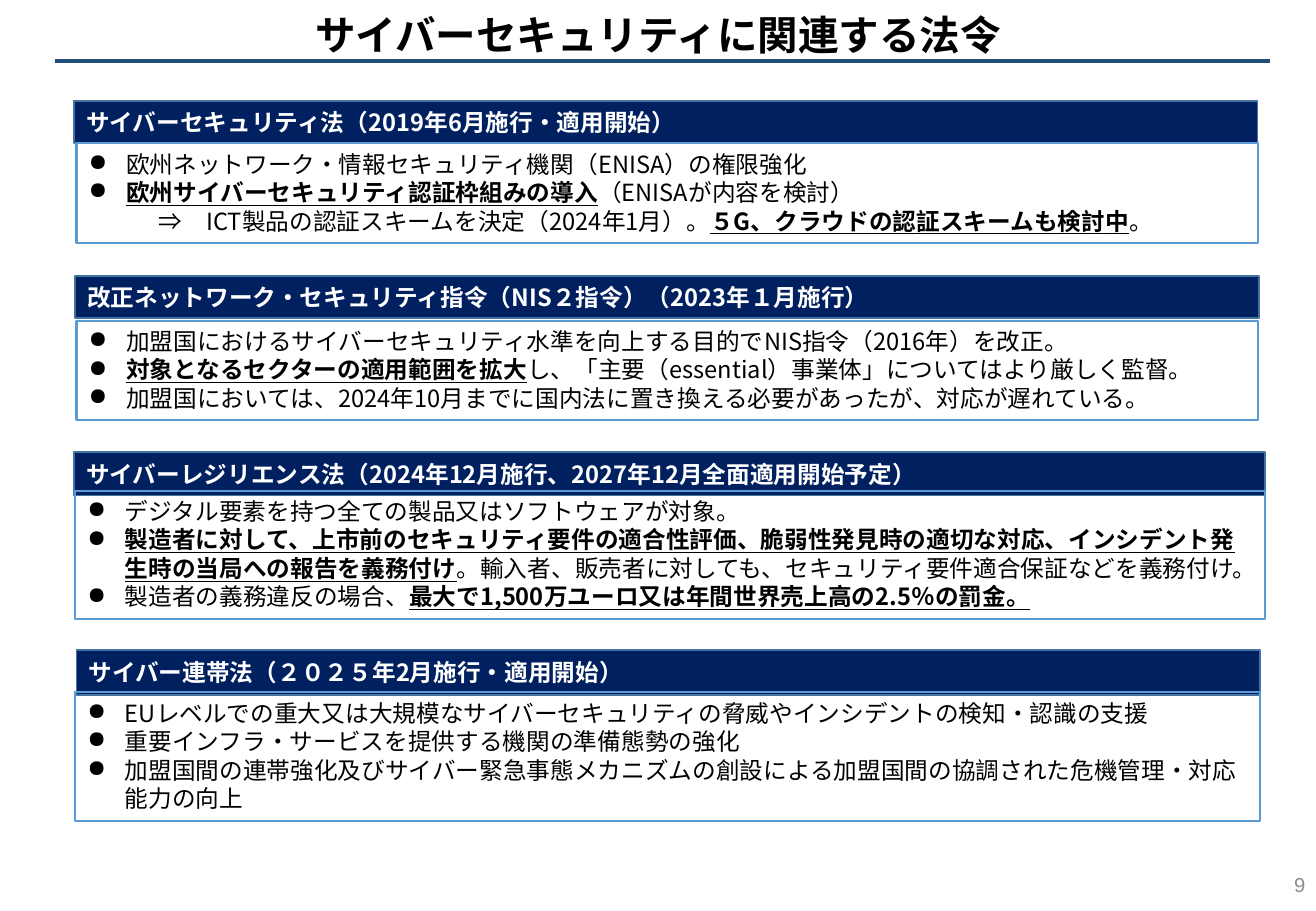
"""Build a slide summarising four laws on cyber security."""
from lxml import etree
from pptx import Presentation
from pptx.dml.color import RGBColor
from pptx.enum.shapes import MSO_CONNECTOR, MSO_SHAPE
from pptx.enum.text import MSO_ANCHOR, PP_ALIGN
from pptx.oxml.ns import qn
from pptx.util import Inches, Pt

RECTANGLE, STRAIGHT = MSO_SHAPE.RECTANGLE, MSO_CONNECTOR.STRAIGHT
TOP, MIDDLE = MSO_ANCHOR.TOP, MSO_ANCHOR.MIDDLE
LEFT, CENTER, RIGHT = PP_ALIGN.LEFT, PP_ALIGN.CENTER, PP_ALIGN.RIGHT

THEME = {
    "font": "Noto Sans CJK JP", "number_font": "Arial",
    "title_size": 24, "law_size": 14, "number_size": 12,
    "title_pitch": 31, "body_pitch": 16.9,
    "text": "000000", "header_text": "FFFFFF", "number": "8C8C8C",
    "rule": "1F4E79", "header_fill": "002060",
    "header_line": "43739E", "body_line": "5B9BD5",
}
BULLET_INDENT, ARROW_INDENT = 0.31, 0.58

TITLE = "サイバーセキュリティに関連する法令"
PAGE_NUMBER = "9"

# Each point is (kind, [(words, emphasised), ...]).
LAWS = [
    {"header": "サイバーセキュリティ法（2019年6月施行・適用開始）",
     "header_box": (0.61, 0.83, 9.74, 0.35), "body_box": (0.63, 1.18, 9.72, 0.82),
     "points": [
         ("bullet", [("欧州ネットワーク・情報セキュリティ機関（ENISA）の権限強化", False)]),
         ("bullet", [("欧州サイバーセキュリティ認証枠組みの導入", True),
                     ("（ENISAが内容を検討）", False)]),
         ("arrow", [("⇒　ICT製品の認証スキームを決定（2024年1月）。", False),
                    ("５G、クラウドの認証スキームも検討中", True), ("。", False)])]},
    {"header": "改正ネットワーク・セキュリティ指令（NIS２指令）（2023年１月施行）",
     "header_box": (0.62, 2.27, 9.74, 0.35), "body_box": (0.63, 2.64, 9.72, 0.82),
     "points": [
         ("bullet", [("加盟国におけるサイバーセキュリティ水準を向上する目的で"
                      "NIS指令（2016年）を改正。", False)]),
         ("bullet", [("対象となるセクターの適用範囲を拡大", True),
                     ("し、「主要（essential）事業体」についてはより厳しく監督。", False)]),
         ("bullet", [("加盟国においては、2024年10月までに国内法に置き換える必要が"
                      "あったが、対応が遅れている。", False)])]},
    {"header": "サイバーレジリエンス法（2024年12月施行、2027年12月全面適用開始予定）",
     "header_box": (0.61, 3.72, 9.8, 0.36), "body_box": (0.62, 4.04, 9.79, 1.06),
     "points": [
         ("bullet", [("デジタル要素を持つ全ての製品又はソフトウェアが対象。", False)]),
         ("bullet", [("製造者に対して、上市前のセキュリティ要件の適合性評価、脆弱性発見時の"
                      "適切な対応、インシデント発生時の当局への報告を義務付け", True),
                     ("。輸入者、販売者に対しても、セキュリティ要件適合保証などを"
                      "義務付け。", False)]),
         ("bullet", [("製造者の義務違反の場合、", False),
                     ("最大で1,500万ユーロ又は年間世界売上高の2.5％の罰金。", True)])]},
    {"header": "サイバー連帯法（２０２５年2月施行・適用開始）",
     "header_box": (0.63, 5.35, 9.74, 0.37), "body_box": (0.62, 5.7, 9.75, 1.06),
     "points": [
         ("bullet", [("EUレベルでの重大又は大規模なサイバーセキュリティの脅威や"
                      "インシデントの検知・認識の支援", False)]),
         ("bullet", [("重要インフラ・サービスを提供する機関の準備態勢の強化", False)]),
         ("bullet", [("加盟国間の連帯強化及びサイバー緊急事態メカニズムの創設による"
                      "加盟国間の協調された危機管理・対応能力の向上", False)])]},
]


def color(key):
    return RGBColor.from_string(THEME[key])


def apply(target, values):
    for name, value in values.items():
        setattr(target, name, value)


def write_run(paragraph, words, size, ink, font="font", **style):
    run = paragraph.add_run()
    run.text = words
    apply(run.font, {"name": THEME[font], "size": Pt(THEME[size]), **style})
    run.font.color.rgb = color(ink)
    east_asian = etree.SubElement(run.font._element, qn("a:ea"))
    east_asian.set("typeface", THEME[font])


def prepare_frame(holder, anchor, align):
    frame = holder.text_frame
    apply(frame, {"word_wrap": True, "vertical_anchor": anchor})
    frame.paragraphs[0].alignment = align
    return frame


def add_label(slide, box, words, size, ink, anchor, align, pitch=None, **style):
    label = slide.shapes.add_textbox(*map(Inches, box))
    paragraph = prepare_frame(label, anchor, align).paragraphs[0]
    if pitch:
        paragraph.line_spacing = Pt(pitch)
    write_run(paragraph, words, size, ink, **style)


def add_panel(slide, box, outline, width, fill=None):
    panel = slide.shapes.add_shape(RECTANGLE, *map(Inches, box))
    panel.shadow.inherit = False
    if fill:
        panel.fill.solid()
        panel.fill.fore_color.rgb = color(fill)
    else:
        panel.fill.background()
    panel.line.color.rgb = color(outline)
    panel.line.width = Pt(width)
    return panel


def indent_point(paragraph, kind):
    properties = paragraph._p.get_or_add_pPr()
    if kind == "bullet":
        properties.set("marL", str(Inches(BULLET_INDENT)))
        properties.set("indent", str(-Inches(BULLET_INDENT)))
        etree.SubElement(properties, qn("a:buChar")).set("char", "●")
    else:
        properties.set("marL", str(Inches(ARROW_INDENT)))
        properties.set("indent", "0")


def add_law(slide, law):
    header = add_panel(slide, law["header_box"], "header_line", 1, "header_fill")
    heading = prepare_frame(header, MIDDLE, LEFT).paragraphs[0]
    write_run(heading, law["header"], "law_size", "header_text", bold=True)

    body = add_panel(slide, law["body_box"], "body_line", 1.25)
    frame = prepare_frame(body, TOP, LEFT)
    for index, (kind, pieces) in enumerate(law["points"]):
        paragraph = frame.add_paragraph() if index else frame.paragraphs[0]
        apply(paragraph, {"alignment": LEFT, "line_spacing": Pt(THEME["body_pitch"])})
        indent_point(paragraph, kind)
        for words, strong in pieces:
            write_run(paragraph, words, "law_size", "text", bold=strong, underline=strong)


def add_title_rule(slide):
    rule = slide.shapes.add_connector(STRAIGHT, *map(Inches, (0.45, 0.5, 10.45, 0.5)))
    rule.line.color.rgb = color("rule")
    rule.line.width = Pt(2.25)
    etree.SubElement(rule._element.spPr, qn("a:effectLst"))


def main():
    deck = Presentation()
    apply(deck, {"slide_width": Inches(10.83), "slide_height": Inches(7.5)})
    slide = deck.slides.add_slide(deck.slide_layouts[6])
    add_label(slide, (8.4, 7.08, 2.44, 0.4), PAGE_NUMBER, "number_size", "number",
              MIDDLE, RIGHT, font="number_font")
    add_title_rule(slide)
    add_label(slide, (0, 0, 10.83, 0.5), TITLE, "title_size", "text",
              TOP, CENTER, THEME["title_pitch"], bold=True)
    for law in LAWS:
        add_law(slide, law)
    deck.save("out.pptx")


if __name__ == "__main__":
    main()
